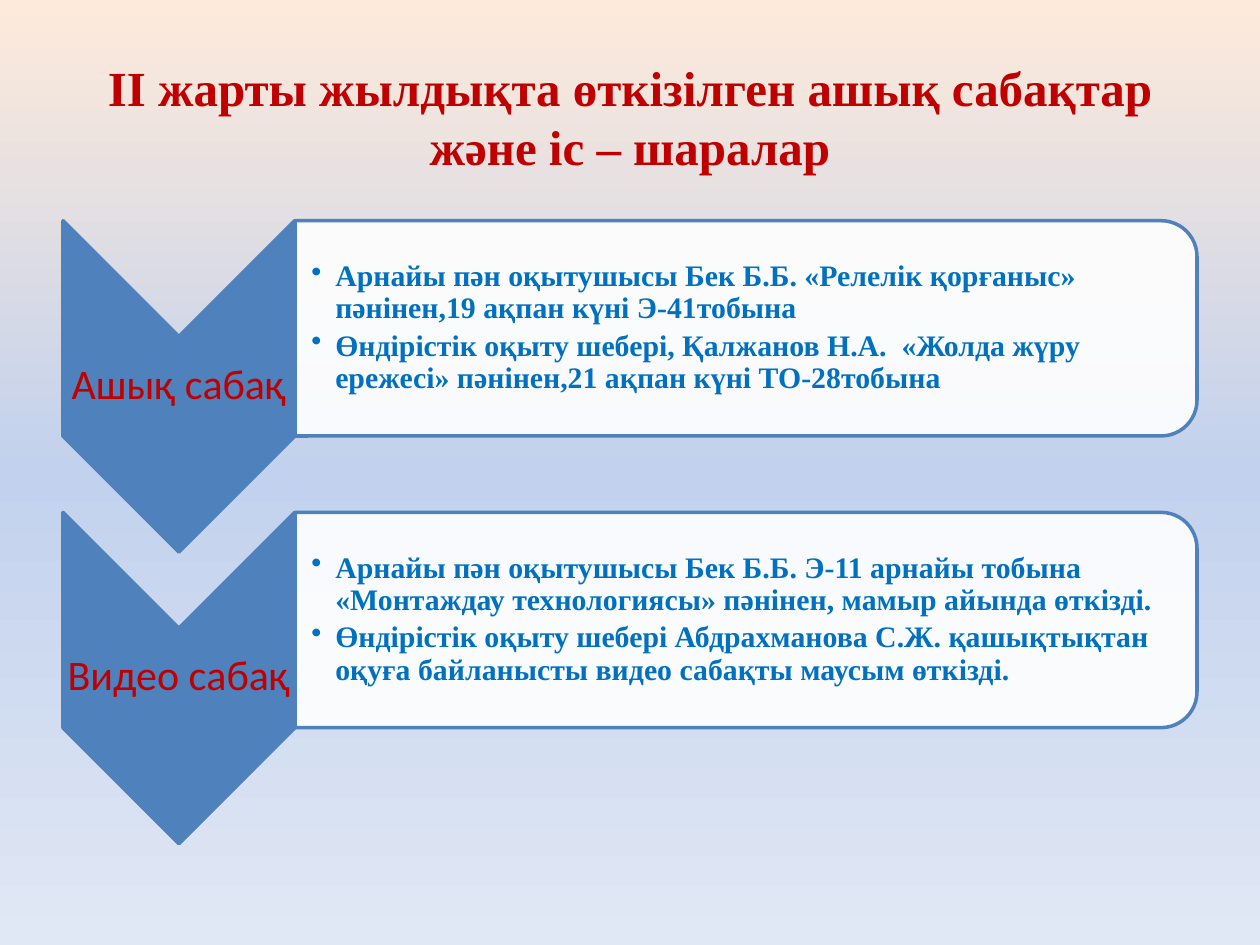
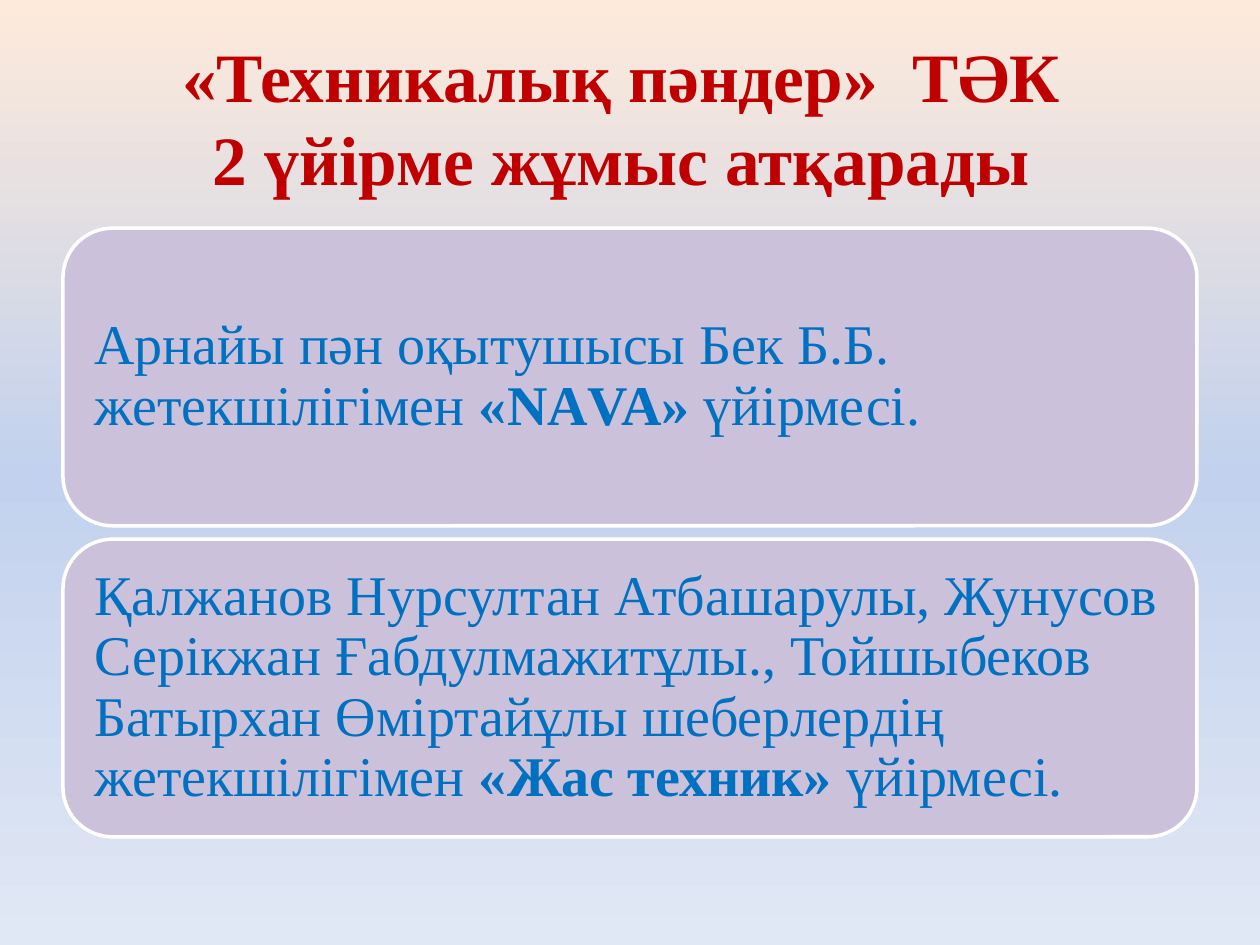
"""Builds two slides on open lessons and study clubs."""
from dataclasses import dataclass

from lxml.etree import SubElement
from pptx import Presentation
from pptx.dml.color import RGBColor
from pptx.enum.shapes import MSO_SHAPE
from pptx.enum.text import MSO_ANCHOR, PP_ALIGN
from pptx.oxml.ns import qn
from pptx.util import Cm, Pt


@dataclass(frozen=True)
class Theme:
    """Colours, fonts and type sizes of the deck."""
    red: str = "C00000"
    blue: str = "0070C0"
    steel: str = "4F81BD"
    lilac: str = "CCC1DA"
    white: str = "FFFFFF"
    sky: tuple = ((0, "FDEADA"), (50, "C2D1ED"), (100, "E1E8F5"))
    serif: str = "Times New Roman"
    sans: str = "Calibri"
    head: float = 28
    large: float = 39.6
    label: float = 24
    item: float = 17
    card: float = 32
    edge: float = 2


class Deck:
    """Holds the theme and the current slide."""

    def __init__(self, theme):
        """Open a deck with the shared backdrop."""
        self.theme = theme
        self.show = Presentation()
        self.show.slide_width, self.show.slide_height = Cm(25.4), Cm(19.05)
        master = self.show.slide_master
        fill = master.background.fill
        fill.gradient()
        fill.gradient_angle = 270
        stops = next(master.element.iter(qn("a:gsLst")))
        for stop in list(stops):
            stops.remove(stop)
        for place, tone in theme.sky:
            stop = SubElement(stops, qn("a:gs"), pos=str(place * 1000))
            SubElement(stop, qn("a:srgbClr"), val=tone)

    def page(self):
        """Start a blank slide."""
        self.slide = self.show.slides.add_slide(self.show.slide_layouts[6])

    def shape(self, kind, box, fill, line, turn=0, alpha=None):
        """Draw a preset shape whose visible frame is box, in centimetres."""
        left, top, wide, high = box
        if turn:
            shift = (wide - high) / 2
            left, top, wide, high = left + shift, top - shift, high, wide
        form = self.slide.shapes.add_shape(kind, Cm(left), Cm(top), Cm(wide), Cm(high))
        form.rotation = turn
        form.shadow.inherit = False
        form.fill.solid()
        form.fill.fore_color.rgb = RGBColor.from_string(fill)
        form.line.color.rgb = RGBColor.from_string(line)
        form.line.width = Pt(self.theme.edge)
        SubElement(next(form.element.iter(qn("a:ln"))), qn("a:round"))
        if alpha:
            tone = next(form.element.iter(qn("a:srgbClr")))
            SubElement(tone, qn("a:alpha"), val=str(alpha * 1000))

    def text(self, box, paras, size, color, font=None, inset=(0.25, 0.13, 0.25, 0.13),
             align=PP_ALIGN.LEFT, space=0.9, after=0, bullet=False):
        """Write paragraphs made of (words, bold) runs; None breaks a line."""
        frame = self.slide.shapes.add_textbox(*map(Cm, box)).text_frame
        frame.word_wrap = True
        frame.vertical_anchor = MSO_ANCHOR.MIDDLE
        (frame.margin_left, frame.margin_top,
         frame.margin_right, frame.margin_bottom) = map(Cm, inset)
        for pos, runs in enumerate(paras):
            para = frame.add_paragraph() if pos else frame.paragraphs[0]
            para.alignment, para.line_spacing = align, space
            para.space_after = Pt(after)
            if bullet:
                props = para._p.get_or_add_pPr()
                props.set("marL", str(Cm(0.48)))
                props.set("indent", str(-Cm(0.48)))
                SubElement(props, qn("a:buChar"), char="•")
            for part in runs:
                if part is None:
                    para.add_line_break()
                    continue
                run = para.add_run()
                run.text, run.font.bold = part
                run.font.size = Pt(size)
                run.font.name = font or self.theme.serif
                run.font.color.rgb = RGBColor.from_string(color)

    def title(self, runs, size):
        """Write the slide title."""
        self.text((1.27, 0.76, 22.86, 3.18), [runs], size, self.theme.red,
                  align=PP_ALIGN.CENTER, space=1)

    def lesson(self, top, label, items):
        """Draw a chevron with its label and a panel of bullets."""
        look = self.theme
        self.shape(MSO_SHAPE.CHEVRON, (1.27, top, 4.67, 6.68),
                   look.steel, look.steel, turn=90)
        self.text((1.27, top + 2.32, 4.67, 2), [[(label, False)]], look.label,
                  look.red, look.sans, (0.05,) * 4, PP_ALIGN.CENTER)
        self.shape(MSO_SHAPE.ROUND_2_SAME_RECTANGLE, (5.95, top, 18.18, 4.34),
                   look.white, look.steel, turn=90, alpha=90)
        self.text((5.95, top + 0.2, 17.98, 3.92), [[(item, True)] for item in items],
                  look.item, look.blue, inset=(0.33, 0.03, 0.03, 0.03),
                  after=3, bullet=True)

    def club(self, top, runs):
        """Draw a rounded card that names a club."""
        look = self.theme
        self.shape(MSO_SHAPE.ROUNDED_RECTANGLE, (1.27, top, 22.86, 6),
                   look.lilac, look.white)
        self.text((1.57, top + 0.29, 22.28, 5.42), [runs], look.card, look.blue,
                  inset=(0.33,) * 4)


LESSONS = (
    ("Ашық сабақ", (
        "Арнайы пән оқытушысы Бек Б.Б. «Релелік қорғаныс» пәнінен,19 ақпан күні Э-41тобына",
        "Өндірістік оқыту шебері, Қалжанов Н.А.  «Жолда жүру ережесі» пәнінен,21 ақпан күні ТО-28тобына")),
    ("Видео сабақ", (
        "Арнайы пән оқытушысы Бек Б.Б. Э-11 арнайы тобына «Монтаждау технологиясы» пәнінен, мамыр айында өткізді.",
        "Өндірістік оқыту шебері Абдрахманова С.Ж. қашықтықтан оқуға байланысты видео сабақты маусым өткізді.")),
)
CLUBS = (
    ("Арнайы пән оқытушысы Бек Б.Б. жетекшілігімен ", "«NАVA» "),
    ("Қалжанов Нурсултан Атбашарулы, Жунусов Серікжан Ғабдулмажитұлы., Тойшыбеков "
     "Батырхан Өміртайұлы шеберлердің жетекшілігімен ", "«Жас техник» "),
)


def main():
    """Build and save the deck."""
    deck = Deck(Theme())
    deck.page()
    deck.title([("ІI жарты жылдықта өткізілген ашық сабақтар және іс – шаралар", True)],
               deck.theme.head)
    for row, (label, items) in enumerate(LESSONS):
        deck.lesson(4.45 + row * 5.88, label, items)
    deck.page()
    deck.title([("«Техникалық пәндер»  ТӘК ", True), None,
                ("2 үйірме жұмыс атқарады ", True)], deck.theme.large)
    for row, (lead, name) in enumerate(CLUBS):
        deck.club(4.6 + row * 6.27, [(lead, False), (name, True), ("үйірмесі.", False)])
    deck.show.save("out.pptx")


if __name__ == "__main__":
    main()
